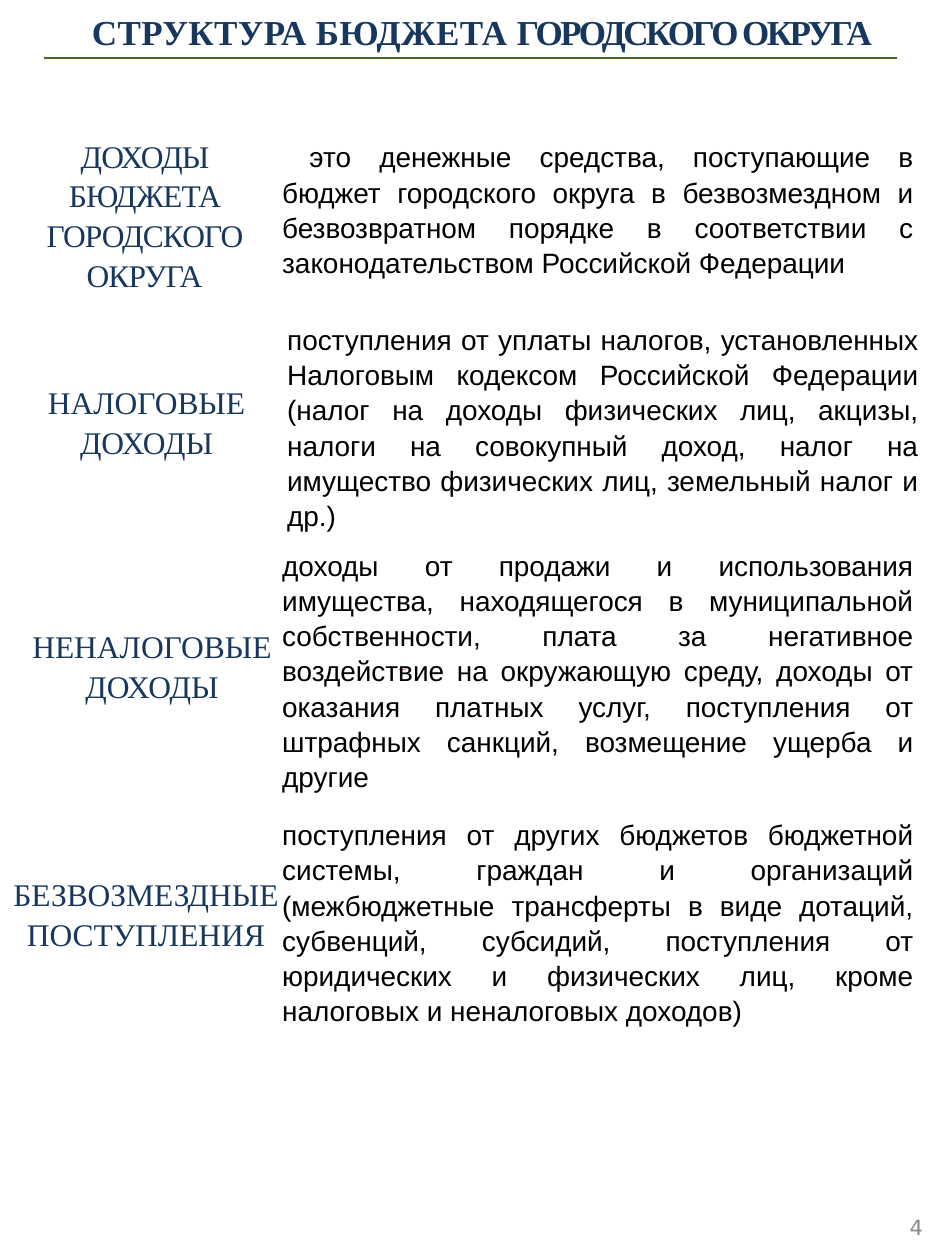
from pptx import Presentation
from pptx.dml.color import RGBColor
from pptx.enum.shapes import MSO_CONNECTOR
from pptx.enum.text import PP_ALIGN
from pptx.oxml.ns import qn
from pptx.util import Cm, Pt
from lxml.etree import SubElement

NAVY, BLACK, GREY = "17375E", "000000", "888888"
SERIF, SANS = "Times New Roman", "Arial"

# Title parts: text, letter spacing in points
TITLE = [("СТРУКТУРА БЮДЖЕТА ", 0.2), ("ГОРОДСКОГО ОКРУГА", -1.5)]

# Terms: text, left, top, width, height (cm), letter spacing
TERMS = [
    ("ДОХОДЫ БЮДЖЕТА ГОРОДСКОГО ОКРУГА", 0.69, 2.72, 4.45, 3.1, -0.5),
    ("НАЛОГОВЫЕ ДОХОДЫ", 0.25, 7.69, 5.41, 1.55, 0),
    ("НЕНАЛОГОВЫЕ ДОХОДЫ", 0.36, 12.6, 5.41, 1.55, 0),
    ("БЕЗВОЗМЕЗДНЫЕ ПОСТУПЛЕНИЯ", 0, 17.61, 5.89, 1.55, 0),
]

# Meanings: text, left, top, number of lines, first-line indent (cm)
MEANINGS = [
    ("это денежные средства, поступающие в бюджет городского округа в "
     "безвозмездном и безвозвратном порядке в соответствии с "
     "законодательством Российской Федерации", 5.69, 2.79, 4, 0.55),
    ("поступления от уплаты налогов, установленных Налоговым кодексом "
     "Российской Федерации (налог на доходы физических лиц, акцизы, налоги "
     "на совокупный доход, налог на имущество физических лиц, земельный "
     "налог и др.)", 5.79, 6.47, 6, 0),
    ("доходы от продажи и использования имущества, находящегося в "
     "муниципальной собственности, плата за негативное воздействие на "
     "окружающую среду, доходы от оказания платных услуг, поступления от "
     "штрафных санкций, возмещение ущерба и другие", 5.69, 11.02, 7, 0),
    ("поступления от других бюджетов бюджетной системы, граждан и "
     "организаций (межбюджетные трансферты в виде дотаций, субвенций, "
     "субсидий, поступления от юридических и физических лиц, кроме "
     "налоговых и неналоговых доходов)", 5.69, 16.45, 6, 0),
]
WIDE, LINE = 12.73, 0.68  # meaning width and line pitch


def color(code):
    return RGBColor.from_string(code)


def write(parts, box, font, size, tint, align, bold=False, indent=0):
    """Add a text box; parts are (text, letter spacing) pairs."""
    shape = slide.shapes.add_textbox(*map(Cm, box))
    frame = shape.text_frame
    frame.word_wrap = True
    frame.margin_left = frame.margin_right = 0
    frame.margin_top = frame.margin_bottom = 0
    para = frame.paragraphs[0]
    para.alignment = align
    para.line_spacing = 1.05
    if indent:
        para._p.get_or_add_pPr().set("indent", str(Cm(indent)))
    for text, gap in parts:
        run = para.add_run()
        run.text = text
        run.font.name, run.font.size = font, Pt(size)
        run.font.bold = bold
        run.font.color.rgb = color(tint)
        if gap:
            run._r.get_or_add_rPr().set("spc", str(round(gap * 100)))


deck = Presentation()
deck.slide_width, deck.slide_height = Cm(19.05), Cm(25.4)
slide = deck.slides.add_slide(deck.slide_layouts[6])

# Small red mark
pen = slide.shapes.build_freeform(Cm(8.18), Cm(13.49))
pen.add_line_segments([(Cm(x), Cm(y)) for x, y in
                       [(8.05, 13.49), (8.05, 13.51), (8.18, 13.51)]])
mark = pen.convert_to_shape()
mark.shadow.inherit = False
mark.fill.solid()
mark.fill.fore_color.rgb = color("FF585E")
mark.line.fill.background()

# Title and the rule below it
rule = slide.shapes.add_connector(
    MSO_CONNECTOR.STRAIGHT, Cm(0.89), Cm(1.17), Cm(18.08), Cm(1.17))
rule.line.color.rgb = color("4F6228")
rule.line.width = Pt(0.75)
SubElement(rule._element.spPr, qn("a:effectLst"))
write(TITLE, (1.14, 0.18, 17.15, 0.9), SERIF, 20, NAVY,
      PP_ALIGN.CENTER, bold=True)

# Terms on the left, meanings on the right
for text, left, top, width, height, gap in TERMS:
    write([(text, gap)], (left, top, width, height), SERIF, 18, NAVY,
          PP_ALIGN.CENTER)
for text, left, top, lines, indent in MEANINGS:
    write([(text, 0)], (left, top, WIDE, lines * LINE), SANS, 16, BLACK,
          PP_ALIGN.JUSTIFY, indent=indent)

# Page number
write([("4", 0)], (18.34, 24.46, 0.59, 0.6), "DejaVu Sans", 12, GREY,
      PP_ALIGN.LEFT)

deck.save("out.pptx")
